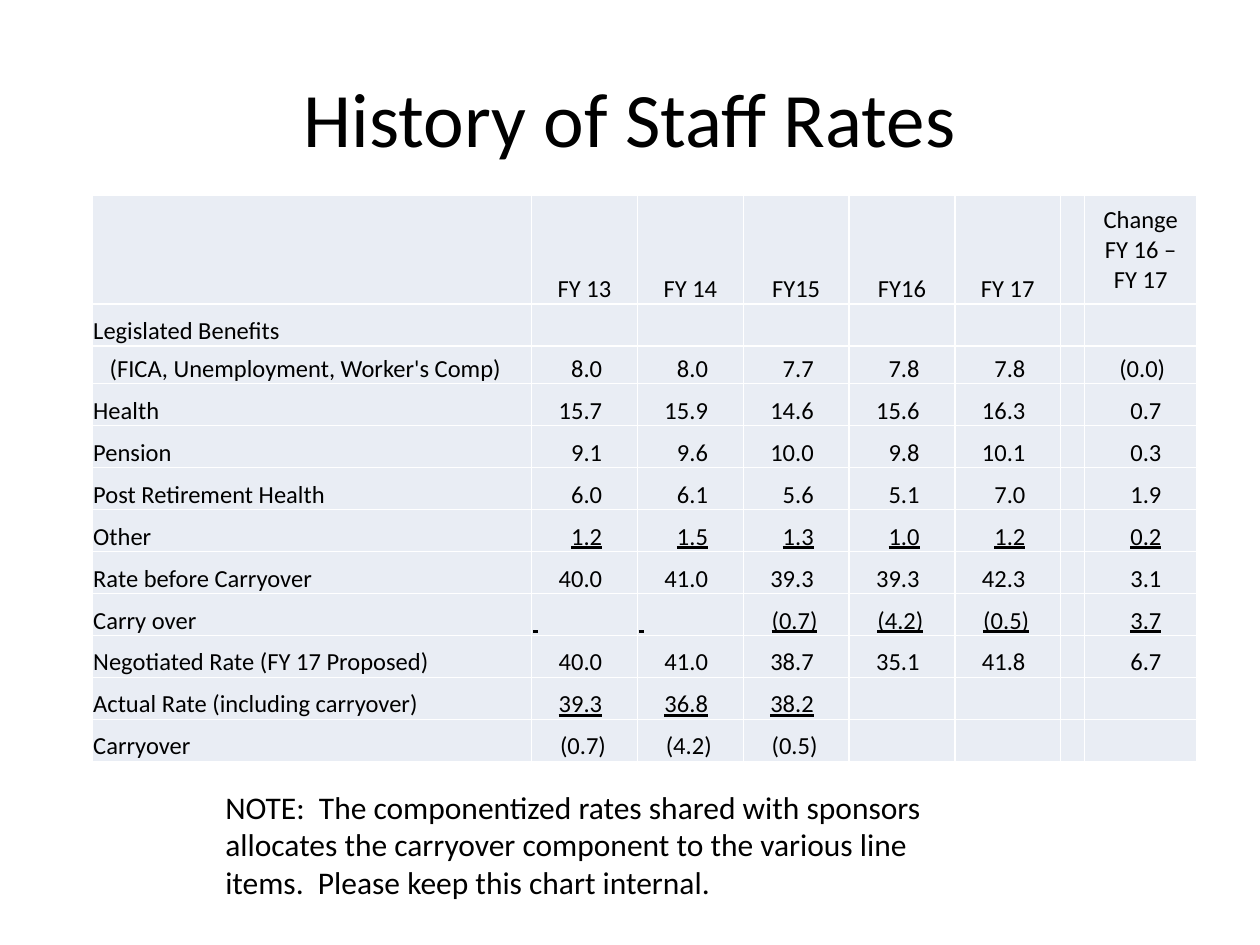
"""Build the slide on the history of staff benefit rates."""
from dataclasses import dataclass

from lxml.etree import SubElement
from pptx import Presentation
from pptx.dml.color import RGBColor
from pptx.enum.text import MSO_ANCHOR as Anchor, PP_ALIGN as Align
from pptx.oxml.ns import qn
from pptx.util import Emu, Inches, Pt

COLORS = {"text": "000000", "cell": "E9EDF4", "grid": "FFFFFF"}
FONT = "Calibri"
WIDTH, HEIGHT = Inches(10), Inches(7.5)
LABEL_COL, YEAR_COL, GAP_COL, CHANGE_COL = 3.49, 0.84, 0.19, 0.89
COLUMNS = [LABEL_COL, *[YEAR_COL] * 5, GAP_COL, CHANGE_COL]
HEADER_ROW, DETAIL_ROW, RATE_ROW = 0.86, 0.3, 1 / 3
HEADINGS = ["", "FY 13", "FY 14", "FY15", "FY16", "FY 17", "", "Change\nFY 16 –\nFY 17"]


@dataclass(frozen=True)
class RateLine:
    label: str
    years: tuple[str, ...] = ("",) * 5
    change: str = ""
    summed: bool = False
    detail: bool = False

    def values(self) -> list[str]:
        return [*self.years, "", self.change]


RATES = [
    RateLine("Legislated Benefits"),
    RateLine("(FICA, Unemployment, Worker's Comp)",
             ("8.0", "8.0", "7.7", "7.8", "7.8"), "(0.0)", detail=True),
    RateLine("Health", ("15.7", "15.9", "14.6", "15.6", "16.3"), "0.7"),
    RateLine("Pension", ("9.1", "9.6", "10.0", "9.8", "10.1"), "0.3"),
    RateLine("Post Retirement Health", ("6.0", "6.1", "5.6", "5.1", "7.0"), "1.9"),
    RateLine("Other", ("1.2", "1.5", "1.3", "1.0", "1.2"), "0.2", summed=True),
    RateLine("Rate before Carryover", ("40.0", "41.0", "39.3", "39.3", "42.3"), "3.1"),
    RateLine("Carry over", (" ", " ", "(0.7)", "(4.2)", "(0.5)"), "3.7", summed=True),
    RateLine("Negotiated Rate (FY 17 Proposed)",
             ("40.0", "41.0", "38.7", "35.1", "41.8"), "6.7"),
    RateLine("Actual Rate (including carryover)",
             ("39.3", "36.8", "38.2", "", ""), summed=True),
    RateLine("Carryover", ("(0.7)", "(4.2)", "(0.5)", "", "")),
]


def area(left: float, top: float, width: float, height: float) -> tuple[Emu, ...]:
    """Turn shares of the slide into lengths."""
    return (Emu(int(left * WIDTH)), Emu(int(top * HEIGHT)),
            Emu(int(width * WIDTH)), Emu(int(height * HEIGHT)))


def add_run(paragraph, text: str, size: float, underline: bool = False) -> None:
    run = paragraph.add_run()
    run.text = text
    run.font.name, run.font.size = FONT, Pt(size)
    run.font.color.rgb = RGBColor.from_string(COLORS["text"])
    if underline:
        run.font.underline = True


def style_cell(cell) -> None:
    """Give a cell its margins, white borders, fill and small empty line."""
    cell.margin_left = cell.margin_right = cell.margin_top = Inches(0.01)
    cell.margin_bottom = 0
    cell.vertical_anchor = Anchor.BOTTOM
    properties = cell._tc.get_or_add_tcPr()
    for side in ("a:lnL", "a:lnR", "a:lnT", "a:lnB"):
        border = SubElement(properties, qn(side), w=str(Pt(1)))
        SubElement(SubElement(border, qn("a:solidFill")), qn("a:srgbClr"), val=COLORS["grid"])
    cell.fill.solid()
    cell.fill.fore_color.rgb = RGBColor.from_string(COLORS["cell"])
    if not cell.text:
        SubElement(cell.text_frame.paragraphs[0]._p, qn("a:endParaRPr"), sz="1400")


def write_heading(cell, heading: str) -> None:
    frame = cell.text_frame
    for index, line in enumerate(heading.split("\n")):
        paragraph = frame.add_paragraph() if index else frame.paragraphs[0]
        paragraph.alignment = Align.CENTER
        add_run(paragraph, line, 14)


def write_value(cell, value: str, column_width: float, summed: bool) -> None:
    """Set a number against a right tab, so that a sum line spans the tab too."""
    paragraph = cell.text_frame.paragraphs[0]
    if value.strip():
        stop = column_width - 0.29 + (0.03 if value.startswith("(") else 0)
        tabs = SubElement(paragraph._p.get_or_add_pPr(), qn("a:tabLst"))
        SubElement(tabs, qn("a:tab"), pos=str(Inches(stop)), algn="r")
        value = "\t" + value
    add_run(paragraph, value, 14, summed)


def add_rate_table(slide) -> None:
    heights = [HEADER_ROW, *[DETAIL_ROW if rate.detail else RATE_ROW for rate in RATES]]
    table = slide.shapes.add_table(len(heights), len(COLUMNS),
                                   *area(0.073, 0.207, 0.877, 0.599)).table
    table.first_row = table.horz_banding = False
    for column, width in zip(table.columns, COLUMNS):
        column.width = Inches(width)
    for row, height in zip(table.rows, heights):
        row.height = Inches(height)
    for column, heading in enumerate(HEADINGS):
        if heading:
            write_heading(table.cell(0, column), heading)
    for row, rate in enumerate(RATES, start=1):
        add_run(table.cell(row, 0).text_frame.paragraphs[0], rate.label, 14)
        for column, value in enumerate(rate.values(), start=1):
            if value:
                write_value(table.cell(row, column), value, COLUMNS[column], rate.summed)
    for cell in table.iter_cells():
        style_cell(cell)
    table.cell(0, len(COLUMNS) - 1).vertical_anchor = Anchor.MIDDLE
    for row, rate in enumerate(RATES, start=1):
        if rate.detail:
            table.cell(row, 0).margin_left = Inches(0.14)


def add_title(slide, text: str) -> None:
    title = slide.shapes.title
    title.left, title.top, title.width, title.height = area(0.05, 0.04, 0.9, 1 / 6)
    title.text_frame.vertical_anchor = Anchor.MIDDLE
    heading = title.text_frame.paragraphs[0]
    heading.alignment = Align.CENTER
    add_run(heading, text, 44)


def add_note(slide, text: str) -> None:
    note = slide.shapes.add_textbox(*area(0.169, 0.827, 0.627, 0.135)).text_frame
    note.word_wrap = True
    add_run(note.paragraphs[0], text, 18)


def main() -> None:
    deck = Presentation()
    deck.slide_width, deck.slide_height = WIDTH, HEIGHT
    slide = deck.slides.add_slide(deck.slide_layouts.get_by_name("Title Only"))
    add_title(slide, "History of Staff Rates")
    add_rate_table(slide)
    add_note(slide, "NOTE:  The componentized rates shared with sponsors allocates the "
                    "carryover component to the various line items.  Please keep this "
                    "chart internal.")
    deck.save("out.pptx")


if __name__ == "__main__":
    main()
